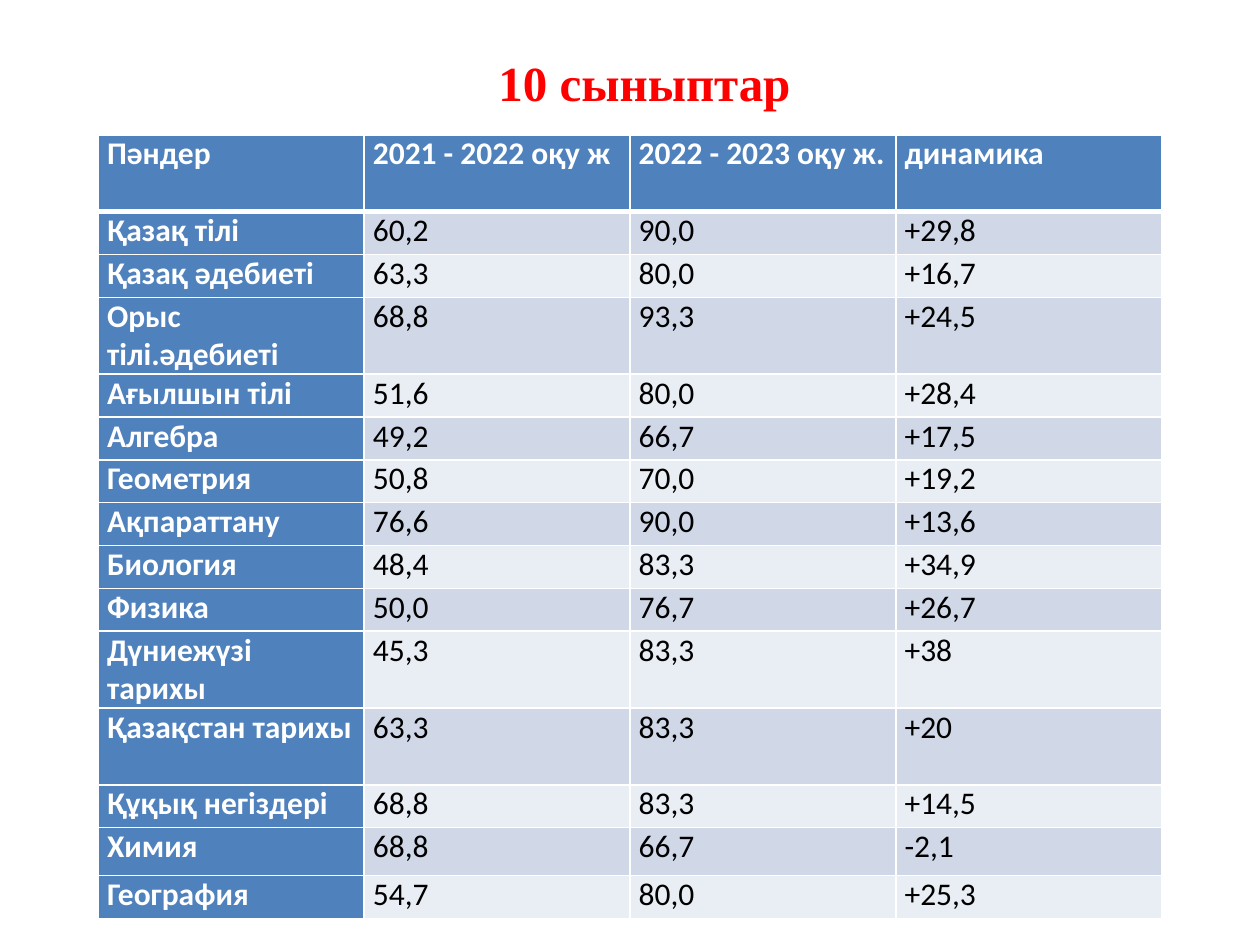
from lxml.etree import SubElement
from pptx import Presentation
from pptx.dml.color import RGBColor
from pptx.enum.text import MSO_ANCHOR, PP_ALIGN
from pptx.oxml.ns import qn
from pptx.util import Inches, Pt

WHITE = RGBColor(0xFF, 0xFF, 0xFF)
BLACK = RGBColor(0x00, 0x00, 0x00)
RED = RGBColor(0xFF, 0x00, 0x00)
BLUE = RGBColor(0x4F, 0x81, 0xBD)
BANDS = (RGBColor(0xE9, 0xED, 0xF4), RGBColor(0xD0, 0xD8, 0xE8))

LEFT = 0.78
TABLE_TOP = 1.07
COLUMN_WIDTH = 2.11
SINGLE_LINE, SPACED_LINE, TWO_LINES = 0.34, 0.38, 0.61
ROW_HEIGHTS = {0: TWO_LINES, 3: TWO_LINES, 10: TWO_LINES, 11: TWO_LINES, 13: SPACED_LINE}
FIRST_LEFT_ALIGNED_ROW = 8
DYNAMICS_COLUMN = 3

RESULTS = (
    ("Пәндер", "2021 - 2022 оқу ж", "2022 - 2023 оқу ж.", "динамика"),
    ("Қазақ тілі", "60,2", "90,0", "+29,8"),
    ("Қазақ әдебиеті", "63,3", "80,0", "+16,7"),
    ("Орыс тілі.әдебиеті", "68,8", "93,3", "+24,5"),
    ("Ағылшын тілі", "51,6", "80,0", "+28,4"),
    ("Алгебра ", "49,2", "66,7", "+17,5"),
    ("Геометрия", "50,8", "70,0", "+19,2"),
    ("Ақпараттану", "76,6", "90,0", "+13,6"),
    ("Биология", "48,4", "83,3", "+34,9"),
    ("Физика", "50,0", "76,7", "+26,7"),
    ("Дүниежүзі тарихы", "45,3", "83,3", "+38"),
    ("Қазақстан тарихы", "63,3", "83,3", "+20"),
    ("Құқық негіздері", "68,8", "83,3", "+14,5"),
    ("Химия", "68,8", "66,7", "-2,1"),
    ("География", "54,7", "80,0", "+25,3"),
)


class SlideBuilder:
    """Builds the title and the results table of one slide in a shared style."""

    def __init__(self, presentation):
        self.slide = presentation.slides.add_slide(presentation.slide_layouts[5])
        self.title_font = "Times New Roman"
        self.body_font = "Calibri"

    def text_run(self, paragraph, text, font, size, color, bold, alignment):
        paragraph.alignment = alignment
        run = paragraph.add_run()
        run.text = text
        run.font.name = font
        run.font.size = Pt(size)
        run.font.color.rgb = color
        run.font.bold = bold

    def title(self, text, left, top, width, height):
        title = self.slide.shapes.title
        title.left, title.top = Inches(left), Inches(top)
        title.width, title.height = Inches(width), Inches(height)
        title.fill.solid()
        title.fill.fore_color.rgb = WHITE
        frame = title.text_frame
        frame.vertical_anchor = MSO_ANCHOR.MIDDLE
        frame.margin_top = Inches(0.21)
        self.text_run(frame.paragraphs[0], text, self.title_font, 28, RED, True, PP_ALIGN.CENTER)

    def borders(self, cell, row):
        properties = cell._tc.get_or_add_tcPr()
        top = 3 if row == 1 else 1
        bottom = 3 if row == 0 else 1
        for side, width in (("lnL", 1), ("lnR", 1), ("lnT", top), ("lnB", bottom)):
            line = SubElement(properties, qn(f"a:{side}"), w=str(Pt(width)))
            fill = SubElement(line, qn("a:solidFill"))
            SubElement(fill, qn("a:srgbClr"), val=str(WHITE))

    def cell(self, cell, text, row, column):
        cell.margin_left = cell.margin_right = Inches(0.07)
        cell.margin_top = cell.margin_bottom = 0
        self.borders(cell, row)
        heading = row == 0 or column == 0
        cell.fill.solid()
        cell.fill.fore_color.rgb = BLUE if heading else BANDS[row % 2]
        left_aligned = column == DYNAMICS_COLUMN and row >= FIRST_LEFT_ALIGNED_ROW
        alignment = PP_ALIGN.LEFT if left_aligned else PP_ALIGN.JUSTIFY
        color = WHITE if heading else BLACK
        self.text_run(cell.text_frame.paragraphs[0], text, self.body_font, 18, color, heading, alignment)

    def table(self, rows, left, top):
        heights = [ROW_HEIGHTS.get(row, SINGLE_LINE) for row in range(len(rows))]
        columns = len(rows[0])
        table = self.slide.shapes.add_table(
            len(rows), columns, Inches(left), Inches(top),
            Inches(COLUMN_WIDTH * columns), Inches(sum(heights)),
        ).table
        table.first_col = True
        for column in table.columns:
            column.width = Inches(COLUMN_WIDTH)
        for row, (values, height) in enumerate(zip(rows, heights)):
            table.rows[row].height = Inches(height)
            for column, value in enumerate(values):
                self.cell(table.cell(row, column), value, row, column)


def main():
    presentation = Presentation()
    presentation.slide_width = Inches(10)
    presentation.slide_height = Inches(7.5)
    builder = SlideBuilder(presentation)
    builder.title("10 сыныптар", LEFT, -0.07, 8.67, 1.28)
    builder.table(RESULTS, LEFT, TABLE_TOP)
    presentation.save("out.pptx")


if __name__ == "__main__":
    main()
